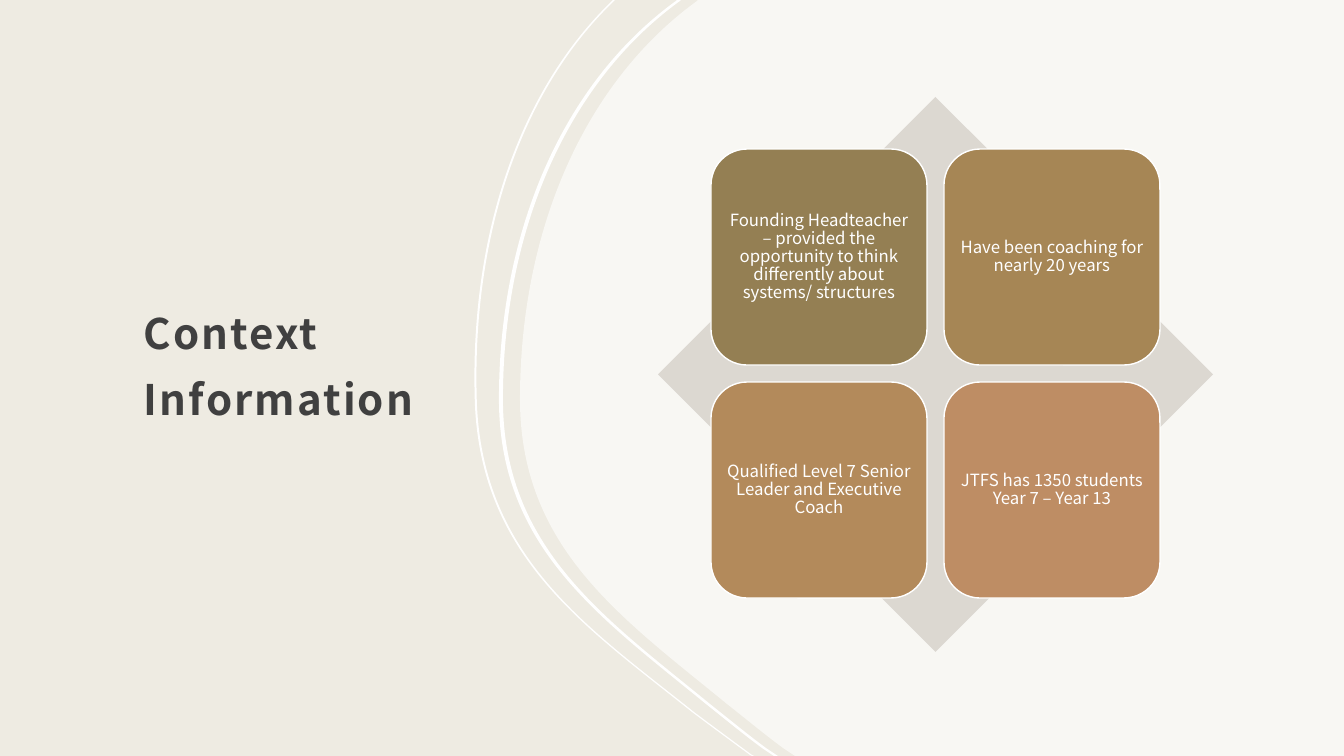
from lxml.etree import SubElement
from pptx import Presentation
from pptx.dml.color import RGBColor
from pptx.enum.shapes import MSO_SHAPE
from pptx.enum.text import MSO_ANCHOR, PP_ALIGN
from pptx.oxml.ns import qn
from pptx.util import Pt

PX = 914400 / 100.8
FONT = "Noto Sans CJK JP"
BACKGROUND = RGBColor(0xEE, 0xEB, 0xE2)
WHITE = RGBColor(0xFF, 0xFF, 0xFF)
TITLE_COLOR = RGBColor(0x40, 0x40, 0x40)
DIAMOND_COLOR = RGBColor(0xDC, 0xD8, 0xD1)


def px(*lengths):
    return [round(length * PX) for length in lengths]


def bend(shape, first):
    """Turn the nine line segments from number first on into three Bezier curves."""
    lines = list(shape._element.iter(qn("a:lnTo")))[first:first + 9]
    for control_1, control_2, target in zip(lines[::3], lines[1::3], lines[2::3]):
        control_1.tag = qn("a:cubicBezTo")
        for line in (control_2, target):
            control_1.append(line[0])
            line.getparent().remove(line)


presentation = Presentation()
presentation.slide_width, presentation.slide_height = px(1344, 756)
slide = presentation.slides.add_slide(presentation.slide_layouts[6])
slide.background.fill.solid()
slide.background.fill.fore_color.rgb = BACKGROUND

# Title
title = slide.shapes.add_textbox(*px(132, 121, 333, 472))
frame = title.text_frame
frame.word_wrap = True
frame.vertical_anchor = MSO_ANCHOR.MIDDLE
frame.margin_left, frame.margin_top, frame.margin_right, frame.margin_bottom = px(12, 12, 12, 10)
paragraph = frame.paragraphs[0]
paragraph.line_spacing = 1.3
run = paragraph.add_run()
run.text = "Context Information"
run.font.name = FONT
run.font.size = Pt(30)
run.font.bold = True
run.font.color.rgb = TITLE_COLOR
run.font._element.set("spc", "150")

# Curved panel and the two ribbons beside it.
# Each edge is a short line, three Bezier curves and a short line.
panel_edge = [
    (698, 0), (697, 1),
    (584, 83), (520, 231), (520, 399),
    (520, 548), (622, 618), (727, 704),
    (746, 719), (764, 734), (783, 748),
    (795, 756)]
outer_edge = [
    (613, 0), (610, 3),
    (516, 95), (469, 242), (475, 405),
    (482, 559), (587, 628), (692, 712),
    (712, 727), (731, 741), (750, 755),
    (752, 756)]
inner_edge = [(x - 21, y) for x, y in panel_edge]

outlines = [(panel_edge + [(1344, 756), (1344, 0)], [1], 60)]
for edge, width in ((outer_edge, 2), (inner_edge, 4)):
    far_edge = [(x + width, y) for x, y in reversed(edge)]
    outlines.append((edge + far_edge, [13, 1], 100))

for outline, curve_starts, opacity in outlines:
    points = [px(*point) for point in outline]
    builder = slide.shapes.build_freeform(*points[0])
    builder.add_line_segments(points[1:], close=True)
    shape = builder.convert_to_shape()
    for curve_start in curve_starts:
        bend(shape, curve_start)
    shape.shadow.inherit = False
    shape.fill.solid()
    shape.fill.fore_color.rgb = WHITE
    shape.line.fill.background()
    if opacity < 100:
        color = shape._element.spPr.find(qn("a:solidFill"))[0]
        SubElement(color, qn("a:alpha"), val=str(opacity * 1000))

# Diamond behind a two-by-two grid of tiles
diamond = slide.shapes.add_shape(MSO_SHAPE.DIAMOND, *px(658, 97, 555, 555))
diamond.shadow.inherit = False
diamond.fill.solid()
diamond.fill.fore_color.rgb = DIAMOND_COLOR
diamond.line.fill.background()

TILE_LEFT, TILE_TOP, TILE_SIZE, TILE_PITCH = 711, 149, 216, 233
tiles = [
    ("Founding Headteacher – provided the opportunity to think differently about "
     "systems/ structures", RGBColor(0x94, 0x7F, 0x53)),
    ("Have been coaching for nearly 20 years", RGBColor(0xA6, 0x86, 0x55)),
    ("Qualified Level 7 Senior Leader and Executive Coach", RGBColor(0xB3, 0x8A, 0x5B)),
    ("JTFS has 1350 students Year 7 – Year 13", RGBColor(0xBE, 0x8D, 0x64)),
]
for index, (text, color) in enumerate(tiles):
    row, column = divmod(index, 2)
    tile = slide.shapes.add_shape(MSO_SHAPE.ROUNDED_RECTANGLE, *px(
        TILE_LEFT + column * TILE_PITCH, TILE_TOP + row * TILE_PITCH, TILE_SIZE, TILE_SIZE))
    tile.shadow.inherit = False
    tile.fill.solid()
    tile.fill.fore_color.rgb = color
    tile.line.color.rgb = WHITE
    tile.line.width = Pt(1)
    frame = tile.text_frame
    frame.word_wrap = True
    frame.vertical_anchor = MSO_ANCHOR.MIDDLE
    frame.margin_left, frame.margin_top, frame.margin_right, frame.margin_bottom = px(5, 5, 5, 5)
    paragraph = frame.paragraphs[0]
    paragraph.text = text
    paragraph.alignment = PP_ALIGN.CENTER
    paragraph.line_spacing = 0.9
    paragraph.font.name = FONT
    paragraph.font.size = Pt(12)
    paragraph.font.color.rgb = WHITE

presentation.save("out.pptx")
